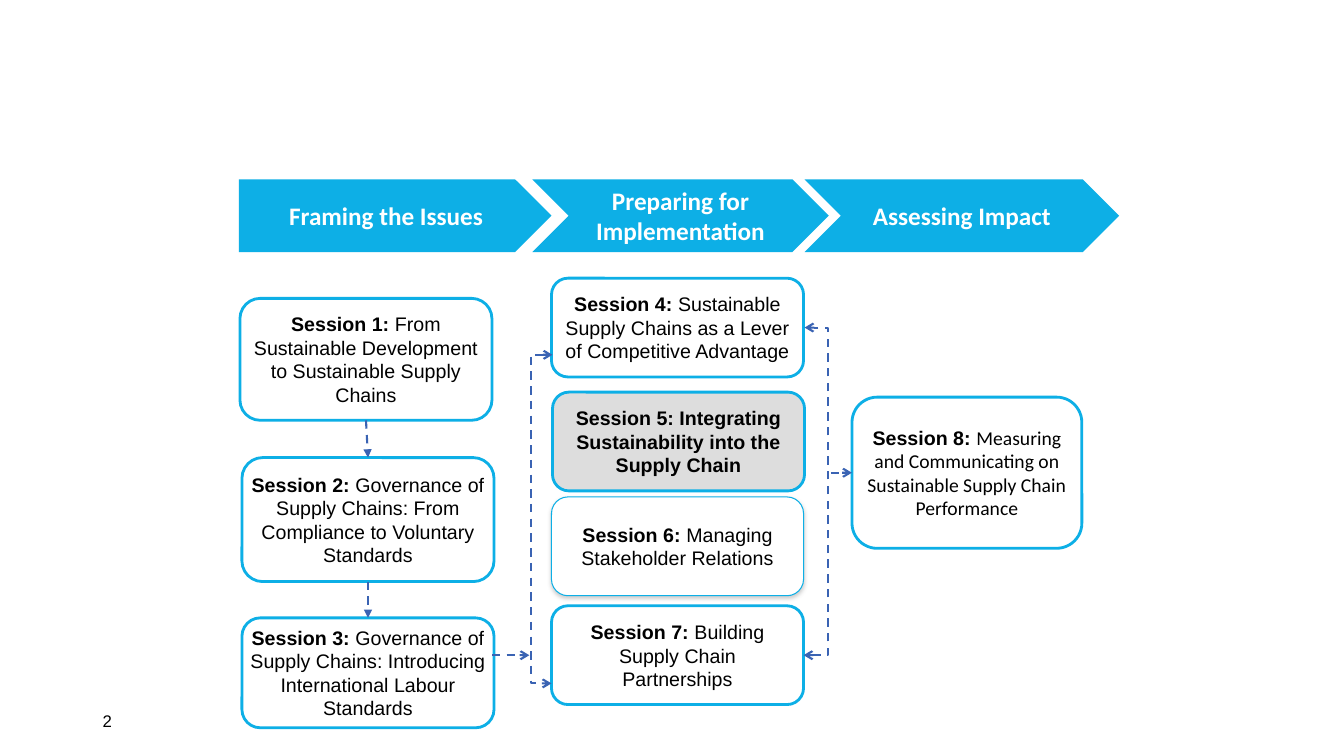
"""Build the slide that maps eight sessions onto three stages."""
from lxml.etree import SubElement
from pptx import Presentation
from pptx.dml.color import RGBColor
from pptx.enum.dml import MSO_LINE
from pptx.enum.shapes import MSO_CONNECTOR, MSO_SHAPE
from pptx.enum.text import MSO_ANCHOR, PP_ALIGN
from pptx.oxml.ns import qn
from pptx.util import Inches, Pt

CYAN = RGBColor(0x0D, 0xAF, 0xE6)
BLUE = RGBColor(0x3A, 0x63, 0xB3)
GREY = RGBColor(0xDD, 0xDD, 0xDD)
WHITE = RGBColor(0xFF, 0xFF, 0xFF)
BLACK = RGBColor(0x00, 0x00, 0x00)

TOP, LEFT, BOTTOM, RIGHT = range(4)

STAGES = [
    (MSO_SHAPE.PENTAGON, 2.37, 3.1, "Framing the Issues"),
    (MSO_SHAPE.CHEVRON, 5.28, 2.94, "Preparing for Implementation"),
    (MSO_SHAPE.CHEVRON, 7.98, 3.12, "Assessing Impact"),
]
SESSIONS = [
    (2.38, 2.96, 2.5, 1.21, "From Sustainable Development to Sustainable Supply Chains"),
    (2.4, 4.54, 2.5, 1.23, "Governance of Supply Chains: From Compliance to Voluntary Standards"),
    (2.4, 6.13, 2.5, 1.09, "Governance of Supply Chains: Introducing International Labour Standards"),
    (5.47, 2.76, 2.5, 0.98, "Sustainable Supply Chains as a Lever of Competitive Advantage"),
    (5.48, 3.89, 2.5, 0.98, "Integrating Sustainability into the Supply Chain"),
    (5.47, 4.93, 2.5, 0.98, "Managing Stakeholder Relations"),
    (5.47, 6.01, 2.5, 0.98, "Building\nSupply Chain\nPartnerships"),
    (8.45, 3.94, 2.28, 1.5, "Measuring and Communicating on Sustainable Supply Chain Performance"),
]
CURRENT_SESSION = 5
SHADOWED_SESSION = 6
CALIBRI_SESSION = 8


def style_paragraph(para, font_name, size, color, bold=None):
    para.font.name = font_name
    para.font.size = Pt(size)
    para.font.color.rgb = color
    para.font.bold = bold


def add_block(page, kind, left, top, width, height, fill):
    box = page.shapes.add_shape(kind, Inches(left), Inches(top), Inches(width), Inches(height))
    box.shadow.inherit = False
    box.fill.solid()
    box.fill.fore_color.rgb = fill
    frame = box.text_frame
    frame.word_wrap = True
    frame.vertical_anchor = MSO_ANCHOR.MIDDLE
    frame.margin_left = frame.margin_right = frame.margin_top = frame.margin_bottom = 0
    frame.paragraphs[0].alignment = PP_ALIGN.CENTER
    return box


def add_stage(page, kind, left, width, title):
    box = add_block(page, kind, left, 1.78, width, 0.72, CYAN)
    box.line.fill.background()
    para = box.text_frame.paragraphs[0]
    para.add_run().text = title
    style_paragraph(para, "Calibri", 18, WHITE, True)


def add_soft_shadow(box):
    effects = box.element.spPr.find(qn("a:effectLst"))
    shadow = SubElement(effects, qn("a:outerShdw"), blurRad=str(Pt(3.1)), dist=str(Pt(1.6)),
                        dir="5400000", rotWithShape="0")
    color = SubElement(shadow, qn("a:srgbClr"), val="808080")
    SubElement(color, qn("a:alpha"), val="38000")


def add_session(page, number, left, top, width, height, topic):
    current = number == CURRENT_SESSION
    shadowed = number == SHADOWED_SESSION
    box = add_block(page, MSO_SHAPE.ROUNDED_RECTANGLE, left, top, width, height,
                    GREY if current else WHITE)
    box.line.color.rgb = CYAN
    box.line.width = Pt(0.75 if shadowed else 2)
    if shadowed:
        add_soft_shadow(box)
    para = box.text_frame.paragraphs[0]
    style_paragraph(para, "Arial", 14, BLACK)
    label = para.add_run()
    label.text = f"Session {number}: "
    label.font.bold = True
    for index, line in enumerate(topic.split("\n")):
        if index:
            para.add_line_break()
        span = para.add_run()
        span.text = line
        span.font.bold = current
        if number == CALIBRI_SESSION:
            span.font.name = "Calibri"
    return box


def add_arrow(page, start, end, tail, head=None, kind=MSO_CONNECTOR.STRAIGHT):
    arrow = page.shapes.add_connector(kind, *map(Inches, start + end))
    arrow.line.color.rgb = BLUE
    arrow.line.width = Pt(1.5)
    arrow.line.dash_style = MSO_LINE.DASH
    outline = arrow.line._get_or_add_ln()
    if head:
        SubElement(outline, qn("a:headEnd"), type=head)
    SubElement(outline, qn("a:tailEnd"), type=tail)
    SubElement(arrow.element.spPr, qn("a:effectLst"))
    return arrow


def add_bracket(page, start, end, spine):
    bracket = add_arrow(page, start, end, "arrow", "arrow", MSO_CONNECTOR.ELBOW)
    ratio = (spine - start[0]) / (end[0] - start[0])
    guides = bracket.element.spPr.find(qn("a:prstGeom")).find(qn("a:avLst"))
    SubElement(guides, qn("a:gd"), name="adj1", fmla=f"val {round(ratio * 100000)}")


def add_page_number(page, number):
    box = page.shapes.add_textbox(Inches(0.92), Inches(6.95), Inches(3), Inches(0.4))
    box.text_frame.word_wrap = True
    box.text_frame.vertical_anchor = MSO_ANCHOR.MIDDLE
    para = box.text_frame.paragraphs[0]
    para.add_run().text = number
    style_paragraph(para, "Arial", 12, BLACK)


def main():
    deck = Presentation()
    deck.slide_width, deck.slide_height = Inches(13.33), Inches(7.5)
    page = deck.slides.add_slide(deck.slide_layouts[6])
    add_page_number(page, "2")
    for stage in STAGES:
        add_stage(page, *stage)
    boxes = [add_session(page, number, *session) for number, session in enumerate(SESSIONS, 1)]

    for upper, lower, start, end in [(0, 1, (3.63, 4.17), (3.65, 4.54)),
                                     (1, 2, (3.65, 5.77), (3.65, 6.13))]:
        arrow = add_arrow(page, start, end, "triangle")
        arrow.begin_connect(boxes[upper], BOTTOM)
        arrow.end_connect(boxes[lower], TOP)
    add_bracket(page, (5.48, 3.52), (5.47, 6.78), 5.26)
    add_bracket(page, (7.97, 6.5), (7.98, 3.25), 8.22)
    add_arrow(page, (4.88, 6.5), (5.25, 6.5), "arrow")
    add_arrow(page, (8.24, 4.69), (8.45, 4.69), "arrow").end_connect(boxes[7], LEFT)
    deck.save("out.pptx")


if __name__ == "__main__":
    main()
